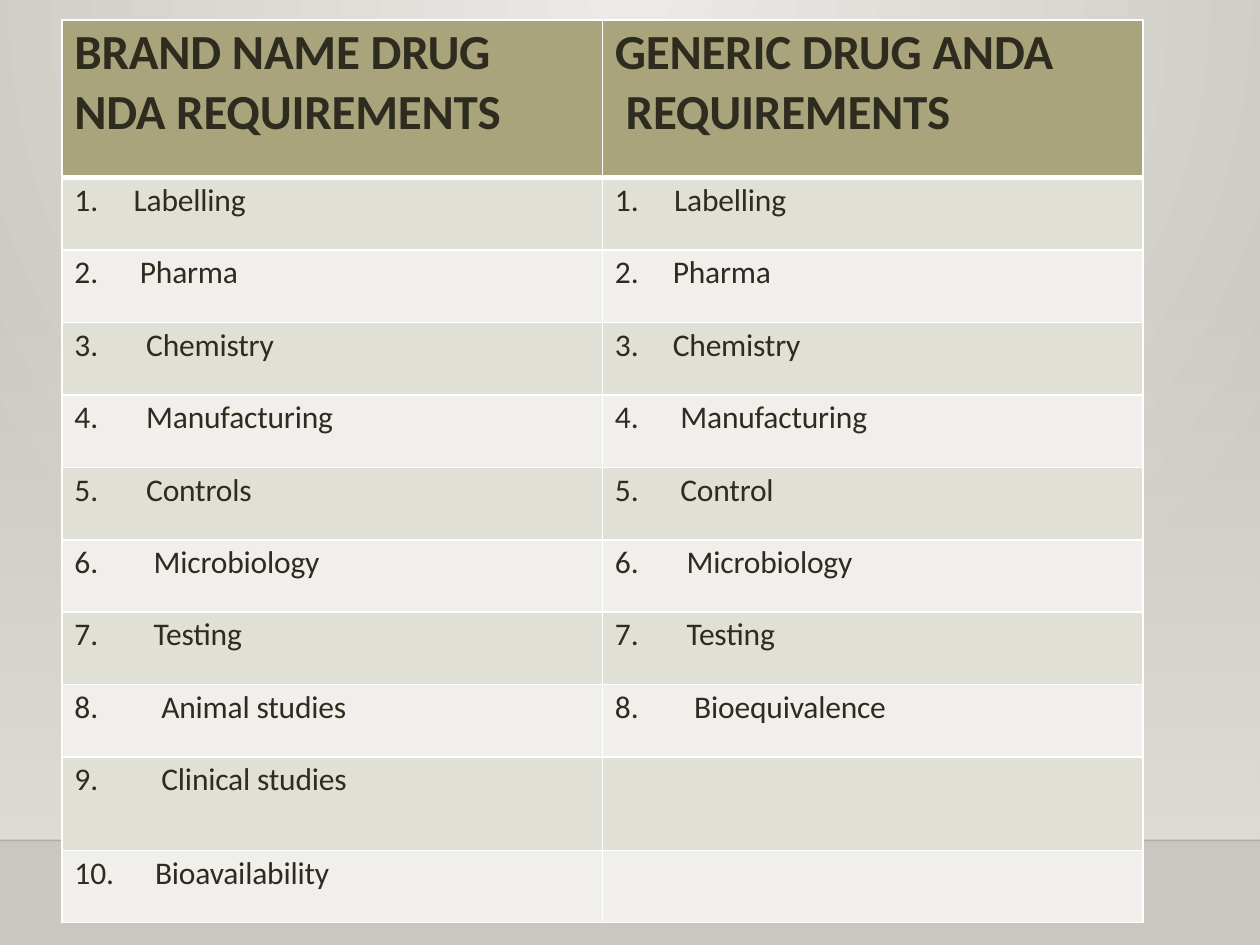
from lxml import etree
from pptx import Presentation
from pptx.dml.color import RGBColor
from pptx.enum.shapes import MSO_CONNECTOR, MSO_SHAPE
from pptx.oxml.ns import qn
from pptx.util import Inches, Pt

RECTANGLE = MSO_SHAPE.RECTANGLE
STRAIGHT = MSO_CONNECTOR.STRAIGHT

FONT = "Calibri"
TEXT = RGBColor(0x2E, 0x2B, 0x1F)
HEADER = RGBColor(0xA9, 0xA4, 0x7B)
BANDS = (RGBColor(0xE1, 0xE0, 0xD6), RGBColor(0xF0, 0xEF, 0xEB))
WHITE = RGBColor(0xFF, 0xFF, 0xFF)
GLOW = RGBColor(0xEC, 0xEA, 0xE7)
EDGE = RGBColor(0xCA, 0xC7, 0xC1)
WALL = RGBColor(0xDF, 0xDB, 0xD5)
HORIZON = RGBColor(0x00, 0x00, 0x01)

WIDTH, HEIGHT = 10, 7.5
WALL_TOP, HORIZON_TOP = 2.2, 6.67
TABLE_LEFT, TABLE_TOP, COLUMN_WIDTH = 0.49, 0.16, 4.29
HEADER_HEIGHT, ROW_HEIGHT, TALL_ROW_HEIGHT = 1.25, 0.575, 0.74
TALL_ROW = 9
TEXT_INSET = 0.1

# Each column: header lines, then (item, tab stop in inches)
COLUMNS = (
    (("BRAND NAME DRUG", "NDA REQUIREMENTS"),
     (("Labelling", 0.47), ("Pharma", 0.52), ("Chemistry", 0.57),
      ("Manufacturing", 0.57), ("Controls", 0.57), ("Microbiology", 0.63),
      ("Testing", 0.63), ("Animal studies", 0.69),
      ("Clinical studies", 0.69), ("Bioavailability", 0.64))),
    (("GENERIC DRUG ANDA", " REQUIREMENTS"),
     (("Labelling", 0.47), ("Pharma", 0.46), ("Chemistry", 0.46),
      ("Manufacturing", 0.52), ("Control", 0.52), ("Microbiology", 0.57),
      ("Testing", 0.57), ("Bioequivalence", 0.63))),
)


def add_element(parent, tag, **attributes):
    return etree.SubElement(parent, qn(tag), attributes)


def set_gradient(element, stops, direction, **attributes):
    """Turn the first solid fill into a gradient of (colour, opacity %) stops."""
    solid = element.find(".//" + qn("a:solidFill"))
    gradient = etree.Element(qn("a:gradFill"), rotWithShape="1")
    stop_list = add_element(gradient, "a:gsLst")
    for position, (color, opacity) in zip((0, 100000), stops):
        stop = add_element(stop_list, "a:gs", pos=str(position))
        srgb = add_element(stop, "a:srgbClr", val=str(color))
        if opacity < 100:
            add_element(srgb, "a:alpha", val=str(opacity * 1000))
    shade = add_element(gradient, direction, **attributes)
    solid.getparent().replace(solid, gradient)
    return shade


def add_backdrop(slide):
    slide.background.fill.solid()
    shade = set_gradient(slide.element, ((GLOW, 100), (EDGE, 100)), "a:path", path="circle")
    add_element(shade, "a:fillToRect", l="43000", t="0", r="43000", b="100000")

    wall = slide.shapes.add_shape(
        RECTANGLE, 0, Inches(WALL_TOP), Inches(WIDTH), Inches(HORIZON_TOP - WALL_TOP))
    wall.shadow.inherit = False
    wall.line.fill.background()
    wall.fill.solid()
    set_gradient(wall.element, ((WALL, 0), (WALL, 100)), "a:lin", ang="5400000", scaled="0")

    horizon = slide.shapes.add_connector(
        STRAIGHT, 0, Inches(HORIZON_TOP), Inches(WIDTH), Inches(HORIZON_TOP))
    horizon.line.width = Pt(1)
    horizon.line.color.rgb = HORIZON
    add_element(horizon.element.find(".//" + qn("a:srgbClr")), "a:alpha", val="20000")
    add_element(horizon.element.spPr, "a:effectLst")


def style_cell(cell, color, top_margin, top_border=1, bottom_border=1):
    cell.margin_left = Inches(TEXT_INSET)
    cell.margin_right = cell.margin_bottom = 0
    cell.margin_top = Inches(top_margin)
    cell.fill.solid()
    cell.fill.fore_color.rgb = color
    properties = cell._tc.get_or_add_tcPr()
    widths = {"a:lnL": 1, "a:lnR": 1, "a:lnT": top_border, "a:lnB": bottom_border}
    for index, (tag, width) in enumerate(widths.items()):
        border = etree.Element(qn(tag), w=str(Pt(width)))
        fill = add_element(border, "a:solidFill")
        add_element(fill, "a:srgbClr", val=str(WHITE))
        properties.insert(index, border)


def add_run(paragraph, text, size, bold=False, spacing=0):
    run = paragraph.add_run()
    run.text = text
    run.font.name = FONT
    run.font.size = Pt(size)
    run.font.bold = bold
    run.font.color.rgb = TEXT
    run.font._element.set("spc", str(spacing))


def fill_header(cell, lines):
    style_cell(cell, HEADER, 0.02, bottom_border=3)
    paragraph = cell.text_frame.paragraphs[0]
    for index, line in enumerate(lines):
        if index:
            paragraph.add_line_break()
        add_run(paragraph, line, 28, bold=True, spacing=-10)


def fill_item(cell, number, item, tab_stop):
    paragraph = cell.text_frame.paragraphs[0]
    tabs = add_element(paragraph._p.get_or_add_pPr(), "a:tabLst")
    add_element(tabs, "a:tab", pos=str(Inches(tab_stop)), algn="l")
    add_run(paragraph, f"{number}.\t", 18)
    add_run(paragraph, item, 18, spacing=-10)


def add_requirements_table(slide):
    item_rows = max(len(items) for _, items in COLUMNS)
    heights = [HEADER_HEIGHT] + [ROW_HEIGHT] * item_rows
    heights[TALL_ROW] = TALL_ROW_HEIGHT
    table = slide.shapes.add_table(
        len(heights), len(COLUMNS), Inches(TABLE_LEFT), Inches(TABLE_TOP),
        Inches(COLUMN_WIDTH * len(COLUMNS)), Inches(sum(heights))).table
    for row, height in zip(table.rows, heights):
        row.height = Inches(height)
    for column, (header, items) in enumerate(COLUMNS):
        table.columns[column].width = Inches(COLUMN_WIDTH)
        fill_header(table.cell(0, column), header)
        for number in range(1, item_rows + 1):
            cell = table.cell(number, column)
            style_cell(cell, BANDS[(number - 1) % 2], 0.03,
                       top_border=3 if number == 1 else 1)
            if number <= len(items):
                fill_item(cell, number, *items[number - 1])


def main():
    presentation = Presentation()
    presentation.slide_width = Inches(WIDTH)
    presentation.slide_height = Inches(HEIGHT)
    slide = presentation.slides.add_slide(presentation.slide_layouts[6])
    add_backdrop(slide)
    add_requirements_table(slide)
    presentation.save("out.pptx")


if __name__ == "__main__":
    main()
